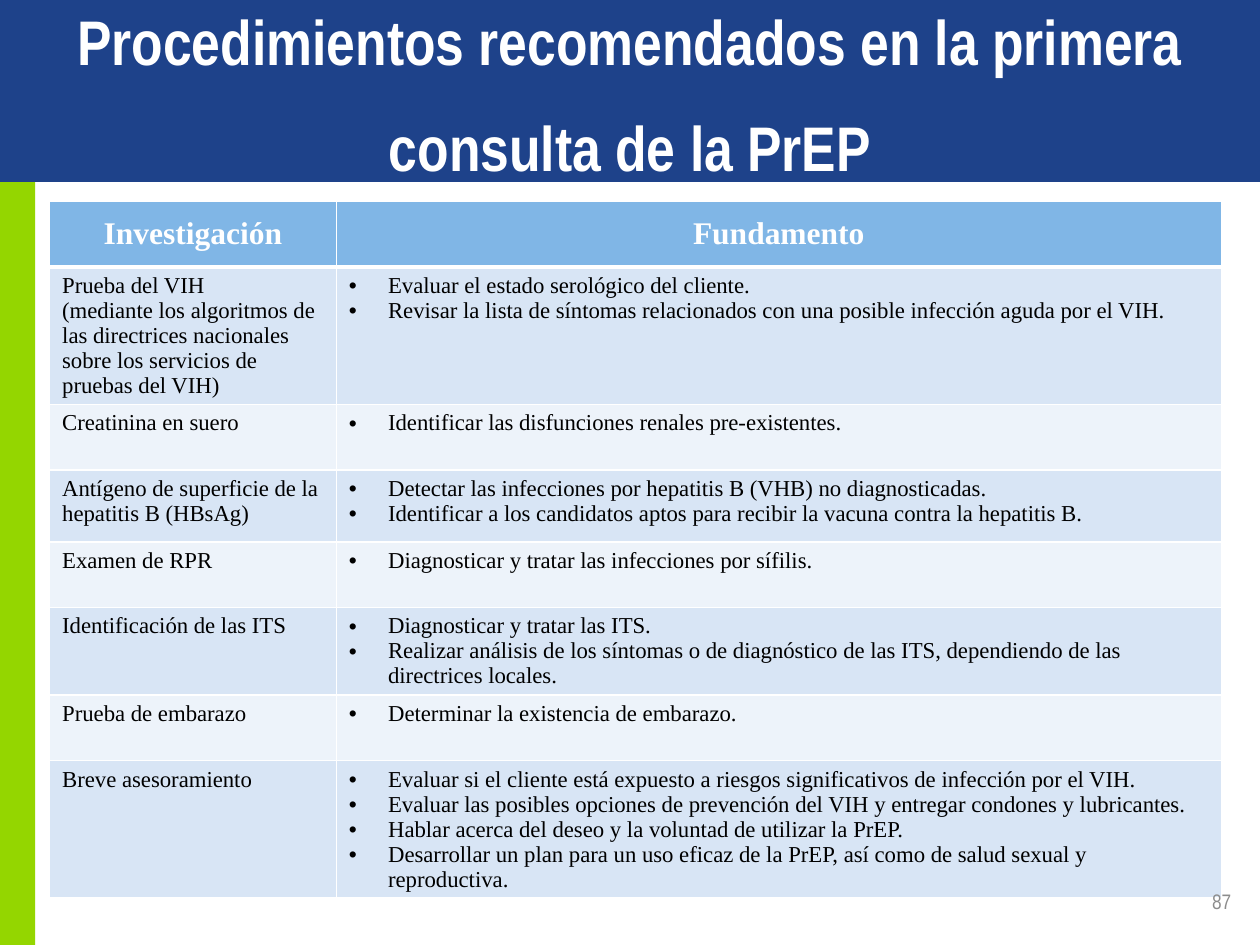
from lxml import etree
from pptx import Presentation
from pptx.dml.color import RGBColor
from pptx.enum.shapes import MSO_SHAPE
from pptx.enum.text import MSO_ANCHOR, PP_ALIGN
from pptx.oxml.ns import qn
from pptx.util import Cm, Pt

RECT = MSO_SHAPE.RECTANGLE
TOP, MIDDLE = MSO_ANCHOR.TOP, MSO_ANCHOR.MIDDLE
LEFT, CENTER, RIGHT = PP_ALIGN.LEFT, PP_ALIGN.CENTER, PP_ALIGN.RIGHT

NARROW, SERIF = "Arial Narrow", "Times New Roman"
WHITE, BLACK, GRAY = "FFFFFF", "000000", "8C8C8C"
NAVY, GREEN = "1E428A", "94D600"
HEADER, BANDS = "80B6E6", ("D8E5F5", "EDF3FA")

COLUMNS = (5.78, 17.84)
HEADER_HEIGHT = 1.32
HEADINGS = ("Investigación", "Fundamento")
# Row height, test, reasons
ROWS = [
    (2.06, ["Prueba del VIH",
            "(mediante los algoritmos de las directrices nacionales sobre los "
            "servicios de pruebas del VIH)"],
     ["Evaluar el estado serológico del cliente.",
      "Revisar la lista de síntomas relacionados con una posible infección "
      "aguda por el VIH."]),
    (1.32, ["Creatinina en suero"],
     ["Identificar las disfunciones renales pre-existentes."]),
    (1.45, ["Antígeno de superficie de la hepatitis B (HBsAg)"],
     ["Detectar las infecciones por hepatitis B (VHB) no diagnosticadas.",
      "Identificar a los candidatos aptos para recibir la vacuna contra la "
      "hepatitis B."]),
    (1.32, ["Examen de RPR"],
     ["Diagnosticar y tratar las infecciones por sífilis."]),
    (1.45, ["Identificación de las ITS"],
     ["Diagnosticar y tratar las ITS.",
      "Realizar análisis de los síntomas o de diagnóstico de las ITS, "
      "dependiendo de las directrices locales."]),
    (1.32, ["Prueba de embarazo"],
     ["Determinar la existencia de embarazo."]),
    (2.67, ["Breve asesoramiento"],
     ["Evaluar si el cliente está expuesto a riesgos significativos de "
      "infección por el VIH.",
      "Evaluar las posibles opciones de prevención del VIH y entregar "
      "condones y lubricantes.",
      "Hablar acerca del deseo y la voluntad de utilizar la PrEP.",
      "Desarrollar un plan para un uso eficaz de la PrEP, así como de salud "
      "sexual y reproductiva."]),
]


def rgb(color):
    return RGBColor.from_string(color)


def add_bullet(p):
    pPr = p._p.get_or_add_pPr()
    pPr.set("marL", str(Cm(0.79)))
    pPr.set("indent", str(-Cm(0.79)))
    etree.SubElement(pPr, qn("a:buFont"), typeface="Arial")
    etree.SubElement(pPr, qn("a:buChar"), char="•")


def write(tf, lines, font=SERIF, size=13, color=BLACK, bold=False,
          align=LEFT, spacing=None, bullet=False):
    """Write one paragraph per line; a vertical tab breaks a line."""
    for i, line in enumerate(lines):
        p = tf.add_paragraph() if i else tf.paragraphs[0]
        p.text = line
        p.alignment = align
        if spacing:
            p.line_spacing = spacing
        if bullet:
            add_bullet(p)
        for r in p.runs:
            r.font.name = font
            r.font.size = Pt(size)
            r.font.bold = bold
            r.font.color.rgb = rgb(color)


def add_bar(s, x, y, w, h, color):
    sp = s.shapes.add_shape(RECT, Cm(x), Cm(y), Cm(w), Cm(h))
    sp.shadow.inherit = False
    sp.fill.solid()
    sp.fill.fore_color.rgb = rgb(color)
    sp.line.fill.background()


def add_title(s, text):
    sp = s.shapes.title
    s.shapes._spTree.append(sp._element)  # in front of the bars
    sp.left, sp.top, sp.width, sp.height = Cm(1.27), Cm(0.53), Cm(22.86), Cm(2.39)
    tf = sp.text_frame
    tf.word_wrap = True
    tf.vertical_anchor = MIDDLE
    tf.margin_left = tf.margin_right = Cm(0.1)
    tf.margin_top, tf.margin_bottom = 0, Cm(0.3)
    write(tf, [text], font=NARROW, size=36, color=WHITE, bold=True,
          align=CENTER, spacing=1.4)


def add_number(s, text):
    sp = s.shapes.add_textbox(Cm(19.15), Cm(17.65), Cm(5.92), Cm(1.02))
    tf = sp.text_frame
    tf.word_wrap = True
    tf.vertical_anchor = MIDDLE
    write(tf, [text], font=NARROW, size=12, color=GRAY, align=RIGHT)


def style_cell(cell, fill, anchor=TOP, top=1, bottom=1):
    tcPr = cell._tc.get_or_add_tcPr()
    for side, width in (("L", 1), ("R", 1), ("T", top), ("B", bottom)):
        ln = etree.SubElement(tcPr, qn("a:ln" + side), w=str(Pt(width)))
        solid = etree.SubElement(ln, qn("a:solidFill"))
        etree.SubElement(solid, qn("a:srgbClr"), val=WHITE)
    cell.fill.solid()
    cell.fill.fore_color.rgb = rgb(fill)
    cell.vertical_anchor = anchor


def add_procedures(s):
    heights = [HEADER_HEIGHT] + [row[0] for row in ROWS]
    table = s.shapes.add_table(len(heights), len(COLUMNS), Cm(1), Cm(4.06),
                               Cm(sum(COLUMNS)), Cm(sum(heights))).table
    for column, width in zip(table.columns, COLUMNS):
        column.width = Cm(width)
    for row, height in zip(table.rows, heights):
        row.height = Cm(height)

    # Header row
    for c, heading in enumerate(HEADINGS):
        cell = table.cell(0, c)
        style_cell(cell, HEADER, anchor=MIDDLE, bottom=3)
        write(cell.text_frame, [heading], size=18, color=WHITE, bold=True,
              align=CENTER)

    # Banded body rows, reasons as bullets
    for i, (_, test, reasons) in enumerate(ROWS):
        for c, lines in enumerate((test, reasons)):
            cell = table.cell(i + 1, c)
            style_cell(cell, BANDS[i % 2], top=1 if i else 3)
            write(cell.text_frame, lines, bullet=c == 1)


def main():
    prs = Presentation()
    prs.slide_width, prs.slide_height = Cm(25.4), Cm(19.05)
    s = prs.slides.add_slide(prs.slide_layouts[5])

    add_bar(s, 0, 3.33, 0.71, 15.72, GREEN)
    add_bar(s, 0, 0, 25.4, 3.67, NAVY)
    add_title(s, "Procedimientos recomendados en la primera\vconsulta de la PrEP")
    add_procedures(s)
    add_number(s, "87")
    prs.save("out.pptx")


if __name__ == "__main__":
    main()
